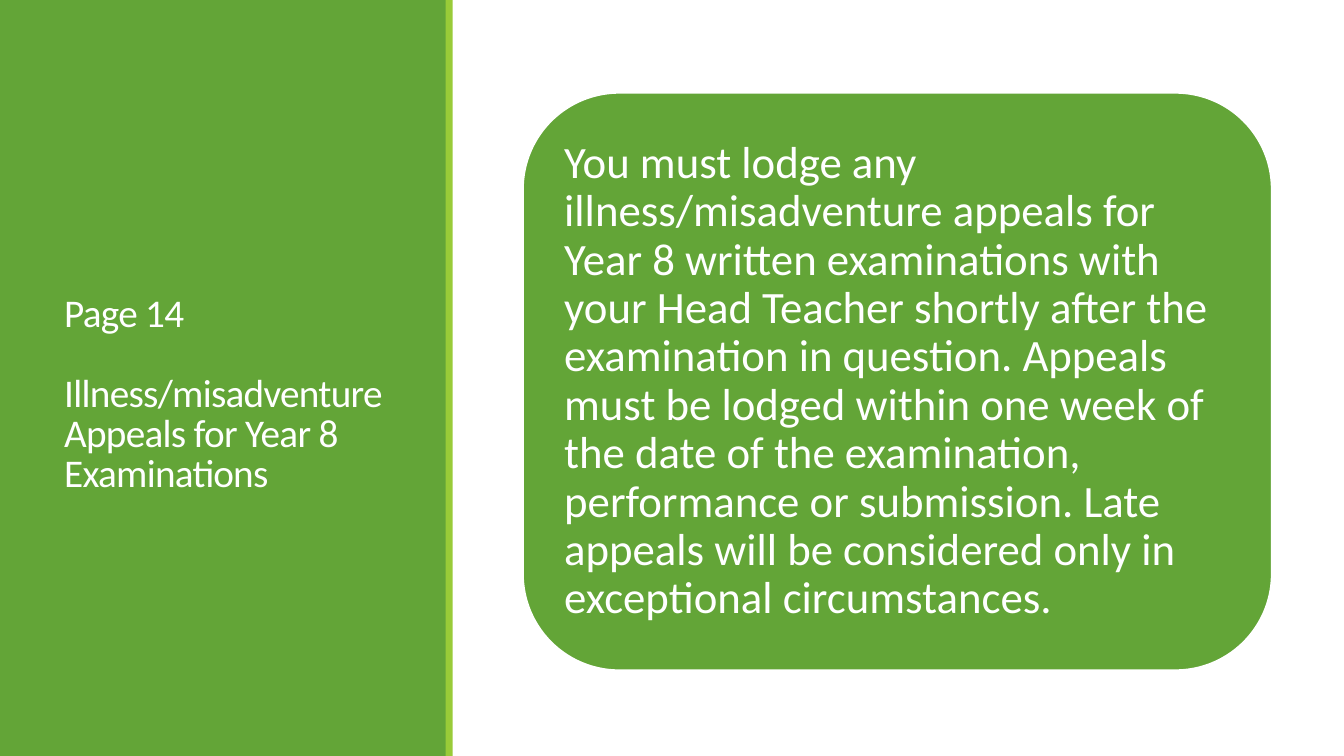
from pptx import Presentation
from pptx import util as u
from pptx.dml.color import RGBColor
from pptx.enum import shapes, text

GREEN = RGBColor(0x63, 0xA5, 0x37)
LIME = RGBColor(0x99, 0xCB, 0x38)
WHITE = RGBColor(0xFF, 0xFF, 0xFF)

deck = Presentation()
deck.slide_width, deck.slide_height = u.Cm(33.87), u.Cm(19.05)
slide = deck.slides.add_slide(deck.slide_layouts[6])


def write(content, *, frame, size, line_spacing, inset=0.25, gap=0, tracking=0):
    """Fill a text frame, one paragraph per line of content."""
    frame.word_wrap = True
    frame.vertical_anchor = text.MSO_ANCHOR.MIDDLE
    frame.margin_left = frame.margin_right = u.Cm(inset)
    frame.margin_top = frame.margin_bottom = u.Cm(min(inset, 0.33))
    for index, line in enumerate(content.split("\n")):
        paragraph = frame.add_paragraph() if index else frame.paragraphs[0]
        paragraph.alignment = text.PP_ALIGN.LEFT
        paragraph.line_spacing = line_spacing
        paragraph.space_before = u.Pt(gap if index else 0)
        run = paragraph.add_run()
        run.text = line
        run.font.name, run.font.size = "Calibri", u.Pt(size)
        run.font.color.rgb = WHITE
        if tracking:
            run.font._element.set("spc", str(round(tracking * 100)))


def block(kind, left, top, width, height, color):
    """Add a plain filled shape, measured in centimetres."""
    shape = slide.shapes.add_shape(kind, *map(u.Cm, (left, top, width, height)))
    shape.shadow.inherit = False
    shape.fill.solid()
    shape.fill.fore_color.rgb = color
    shape.line.fill.background()
    return shape


# Side panel with its edge stripe
for left, width, color in [(0, 11.25, GREEN), (11.23, 0.18, LIME)]:
    block(shapes.MSO_SHAPE.RECTANGLE, left, 0, width, 19.05, color)

# Page title
title = slide.shapes.add_textbox(u.Cm(1.37), u.Cm(2.46), u.Cm(8.56), u.Cm(15))
write("Page 14\nIllness/misadventure Appeals for Year 8 Examinations",
      frame=title.text_frame, size=28, line_spacing=0.85, gap=28.5, tracking=-0.5)

# Appeal rule card
appeal_rule = block(shapes.MSO_SHAPE.ROUNDED_RECTANGLE, 13.18, 2.34, 18.87, 14.55, GREEN)
appeal_rule.line.color.rgb = WHITE
appeal_rule.line.width = u.Pt(1.25)
write("You must lodge any illness/misadventure appeals for Year 8 written "
      "examinations with your Head Teacher shortly after the examination in "
      "question. Appeals must be lodged within one week of the date of the "
      "examination, performance or submission. Late appeals will be considered "
      "only in exceptional circumstances.",
      frame=appeal_rule.text_frame, size=32, line_spacing=0.9, inset=0.33)

deck.save("out.pptx")
